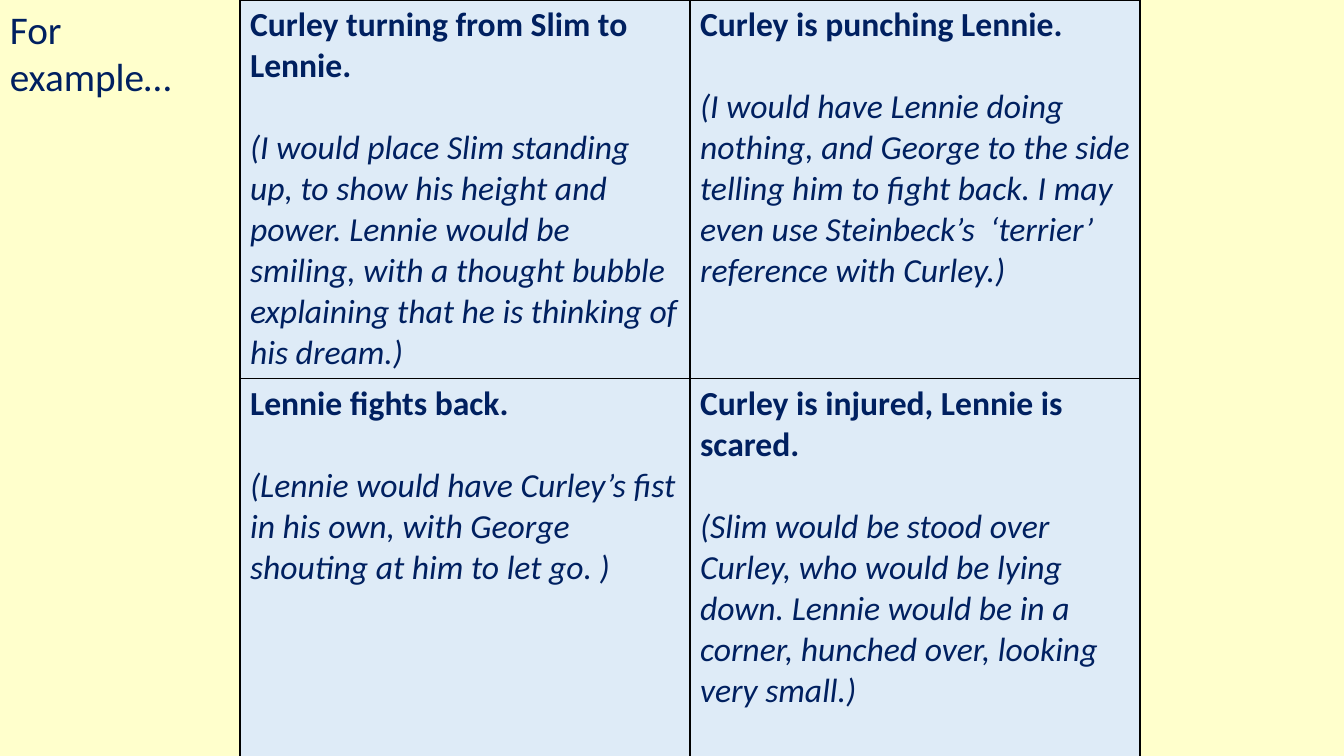
from lxml import etree
from pptx import Presentation
from pptx.dml.color import RGBColor
from pptx.oxml.ns import qn
from pptx.util import Emu, Pt

CREAM = RGBColor(0xFF, 0xFF, 0xCC)
PALE_BLUE = RGBColor(0xDE, 0xEB, 0xF7)
NAVY = RGBColor(0x00, 0x20, 0x60)
BLACK = RGBColor(0x00, 0x00, 0x00)

FONT = "Calibri"
SLIDE_WIDTH, SLIDE_HEIGHT = 1344, 756
PARAGRAPH_GAP = Pt(29)

# Each scene: what happens, then how it would be drawn
SCENES = [
    [
        ("Curley turning from Slim to Lennie.",
         "(I would place Slim standing up, to show his height and power. Lennie would be "
         "smiling, with a thought bubble explaining that he is thinking of his dream.)"),
        ("Curley is punching Lennie.",
         "(I would have Lennie doing nothing, and George to the side telling him to fight "
         "back. I may even use Steinbeck’s  ‘terrier’ reference with Curley.)"),
    ],
    [
        ("Lennie fights back.",
         "(Lennie would have Curley’s fist in his own, with George shouting at him to let go. )"),
        ("Curley is injured, Lennie is scared.",
         "(Slim would be stood over Curley, who would be lying down. Lennie would be in a "
         "corner, hunched over, looking very small.)"),
    ],
]


def px(length):
    return Emu(round(length * 914400 / 100.8))


def format_font(font, size, bold=False, italic=False):
    font.name = FONT
    font.size = Pt(size)
    font.bold = bold
    font.italic = italic
    font.color.rgb = NAVY


def set_borders(cell):
    properties = cell._tc.get_or_add_tcPr()
    for position, side in enumerate(("a:lnL", "a:lnR", "a:lnT", "a:lnB")):
        line = etree.Element(qn(side), w=str(Pt(1)))
        fill = etree.SubElement(line, qn("a:solidFill"))
        etree.SubElement(fill, qn("a:srgbClr"), val=str(BLACK))
        properties.insert(position, line)


def fill_scene(cell, event, staging):
    cell.fill.solid()
    cell.fill.fore_color.rgb = PALE_BLUE
    set_borders(cell)
    cell.text_frame.text = event
    heading = cell.text_frame.paragraphs[0]
    format_font(heading.runs[0].font, 24, bold=True)
    description = cell.text_frame.add_paragraph()
    description.text = staging
    description.space_before = PARAGRAPH_GAP
    format_font(description.runs[0].font, 24, italic=True)


def add_storyboard(slide, left, top, width, height):
    row_count, column_count = len(SCENES), len(SCENES[0])
    frame = slide.shapes.add_table(row_count, column_count,
                                   px(left), px(top), px(width), px(height))
    table = frame.table
    table.first_row = False
    table.horz_banding = False
    for column in table.columns:
        column.width = px(width / column_count)
    for row, scenes in zip(table.rows, SCENES):
        row.height = px(height / row_count)
        for cell, scene in zip(row.cells, scenes):
            fill_scene(cell, *scene)


def add_label(slide, left, top, width, height):
    label = slide.shapes.add_textbox(px(left), px(top), px(width), px(height))
    label.text_frame.word_wrap = True
    label.text_frame.text = "For example…"
    format_font(label.text_frame.paragraphs[0].runs[0].font, 28)


def main():
    presentation = Presentation()
    presentation.slide_width = px(SLIDE_WIDTH)
    presentation.slide_height = px(SLIDE_HEIGHT)
    slide = presentation.slides.add_slide(presentation.slide_layouts[6])
    slide.background.fill.solid()
    slide.background.fill.fore_color.rgb = CREAM

    # Four-scene storyboard, full slide height
    add_storyboard(slide, 240, 0, 900, SLIDE_HEIGHT)
    # Label in the left margin
    add_label(slide, 0, 0, 225, 105)

    presentation.save("out.pptx")


if __name__ == "__main__":
    main()
